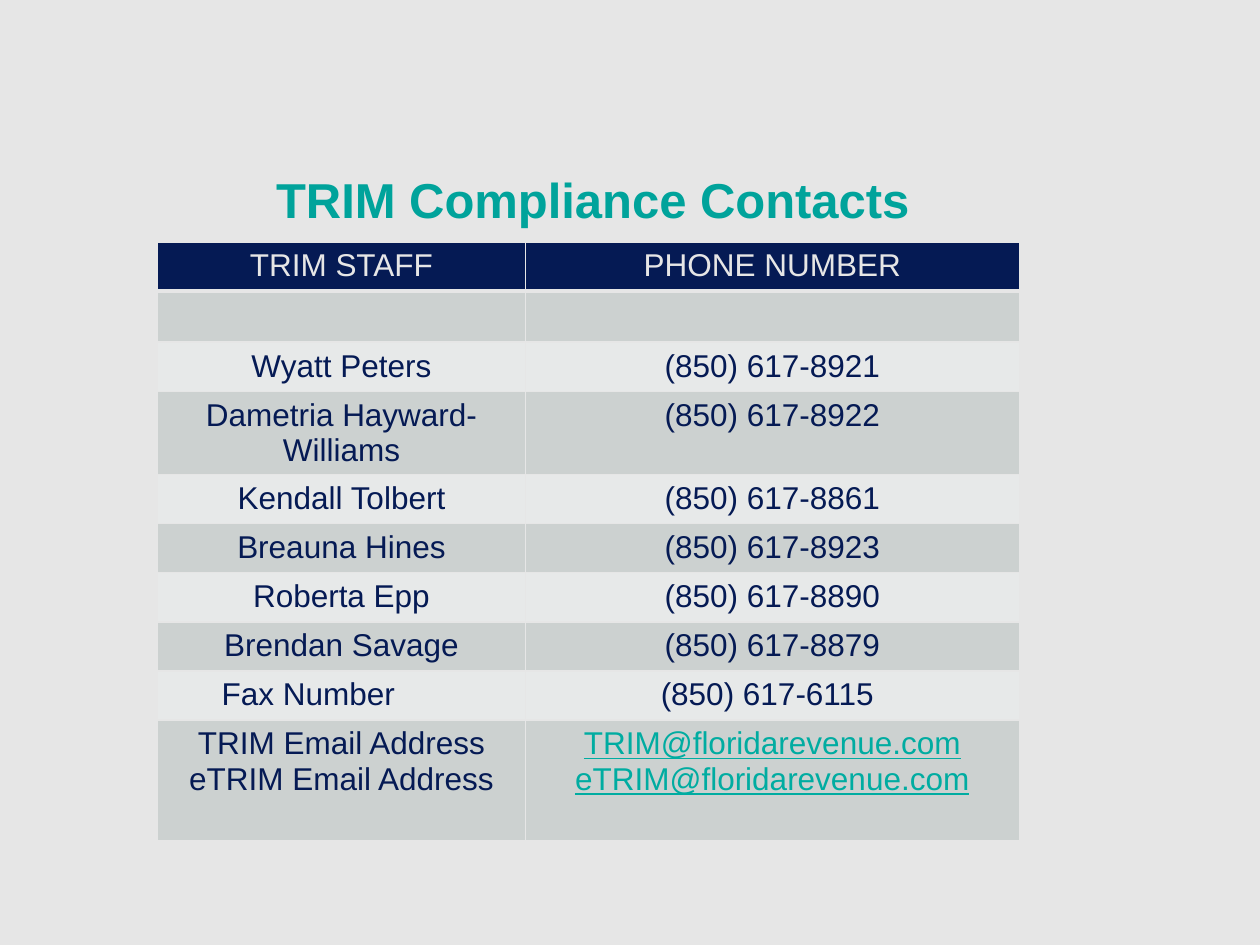
from dataclasses import dataclass

from lxml.etree import SubElement
from pptx import Presentation
from pptx.dml.color import RGBColor
from pptx.enum.text import MSO_ANCHOR, PP_ALIGN
from pptx.oxml.ns import qn
from pptx.slide import Slide
from pptx.table import _Cell
from pptx.util import Inches, Pt


@dataclass(frozen=True)
class Theme:
    font: str = "Arial"
    title_size: int = 28
    text_size: int = 18
    paper: str = "E6E6E6"
    navy: str = "051A54"
    teal: str = "00A39B"
    link: str = "00ACA1"
    band_dark: str = "CCD1D0"
    band_light: str = "E7E9E9"


@dataclass(frozen=True)
class Contact:
    labels: tuple[str, ...] = ()
    values: tuple[str, ...] = ()
    height: float = 0.39


THEME = Theme()
COLUMNS = (2.92, 3.92)
HEADER = Contact(("TRIM STAFF",), ("PHONE NUMBER",))
CONTACTS = (
    Contact(),
    Contact(("Wyatt Peters",), ("(850) 617-8921",)),
    Contact(("Dametria Hayward-Williams",), ("(850) 617-8922",)),
    Contact(("Kendall Tolbert",), ("(850) 617-8861",)),
    Contact(("Breauna Hines",), ("(850) 617-8923",)),
    Contact(("Roberta Epp",), ("(850) 617-8890",)),
    Contact(("Brendan Savage",), ("(850) 617-8879",)),
    Contact(("Fax Number",), ("(850) 617-6115",)),
    Contact(
        ("TRIM Email Address", "eTRIM Email Address"),
        ("TRIM@floridarevenue.com", "eTRIM@floridarevenue.com"),
        0.96,
    ),
)


def rgb(color: str) -> RGBColor:
    return RGBColor.from_string(color)


def add_run(p, text: str, size: int, color: str):
    r = p.add_run()
    r.text = text
    r.font.name = THEME.font
    r.font.size = Pt(size)
    r.font.bold = False
    r.font.color.rgb = rgb(color)
    return r


def set_borders(cell: _Cell, bottom: int) -> None:
    tc_pr = cell._tc.get_or_add_tcPr()
    for side, width in {"L": 1, "R": 1, "T": 1, "B": bottom}.items():
        ln = SubElement(tc_pr, qn(f"a:ln{side}"), w=str(Pt(width)))
        fill = SubElement(ln, qn("a:solidFill"))
        SubElement(fill, qn("a:srgbClr"), val=THEME.paper)


def fill_cell(cell: _Cell, lines: tuple[str, ...], fill: str, color: str, bottom: int = 1) -> None:
    set_borders(cell, bottom)
    cell.fill.solid()
    cell.fill.fore_color.rgb = rgb(fill)
    tf = cell.text_frame
    for i, line in enumerate(lines):
        p = tf.add_paragraph() if i else tf.paragraphs[0]
        p.alignment = PP_ALIGN.CENTER
        is_email = "@" in line
        r = add_run(p, line, THEME.text_size, THEME.link if is_email else color)
        if is_email:
            r.font.underline = True


def add_title(s: Slide, text: str) -> None:
    sp = s.shapes.title
    sp.left, sp.top, sp.width, sp.height = map(Inches, (0.79, 1.26, 7.83, 0.63))
    tf = sp.text_frame
    tf.vertical_anchor = MSO_ANCHOR.MIDDLE
    p = tf.paragraphs[0]
    p.alignment = PP_ALIGN.CENTER
    add_run(p, text, THEME.title_size, THEME.teal).font.bold = True


def add_contacts(s: Slide) -> None:
    rows = (HEADER, *CONTACTS)
    height = sum(row.height for row in rows)
    table = s.shapes.add_table(
        len(rows), len(COLUMNS), Inches(1.25), Inches(1.92), Inches(sum(COLUMNS)), Inches(height)
    ).table
    for column, width in zip(table.columns, COLUMNS):
        column.width = Inches(width)
    for i, row in enumerate(rows):
        table.rows[i].height = Inches(row.height)
        band = THEME.band_dark if i % 2 else THEME.band_light
        for j, lines in enumerate((row.labels, row.values)):
            if row is HEADER:
                fill_cell(table.cell(i, j), lines, THEME.navy, THEME.paper, bottom=3)
            else:
                fill_cell(table.cell(i, j), lines, band, THEME.navy)
    label, number = table.cell(len(rows) - 2, 0), table.cell(len(rows) - 2, 1)
    label.text_frame.paragraphs[0].alignment = PP_ALIGN.LEFT
    label.margin_left = Inches(0.51)
    number.margin_right = Inches(0.18)


def main() -> None:
    """Build the contacts slide and save it."""
    prs = Presentation()
    prs.slide_width, prs.slide_height = Inches(10), Inches(7.5)
    s = prs.slides.add_slide(prs.slide_layouts[5])
    s.background.fill.solid()
    s.background.fill.fore_color.rgb = rgb(THEME.paper)
    add_title(s, "TRIM Compliance Contacts")
    add_contacts(s)
    prs.save("out.pptx")


if __name__ == "__main__":
    main()
